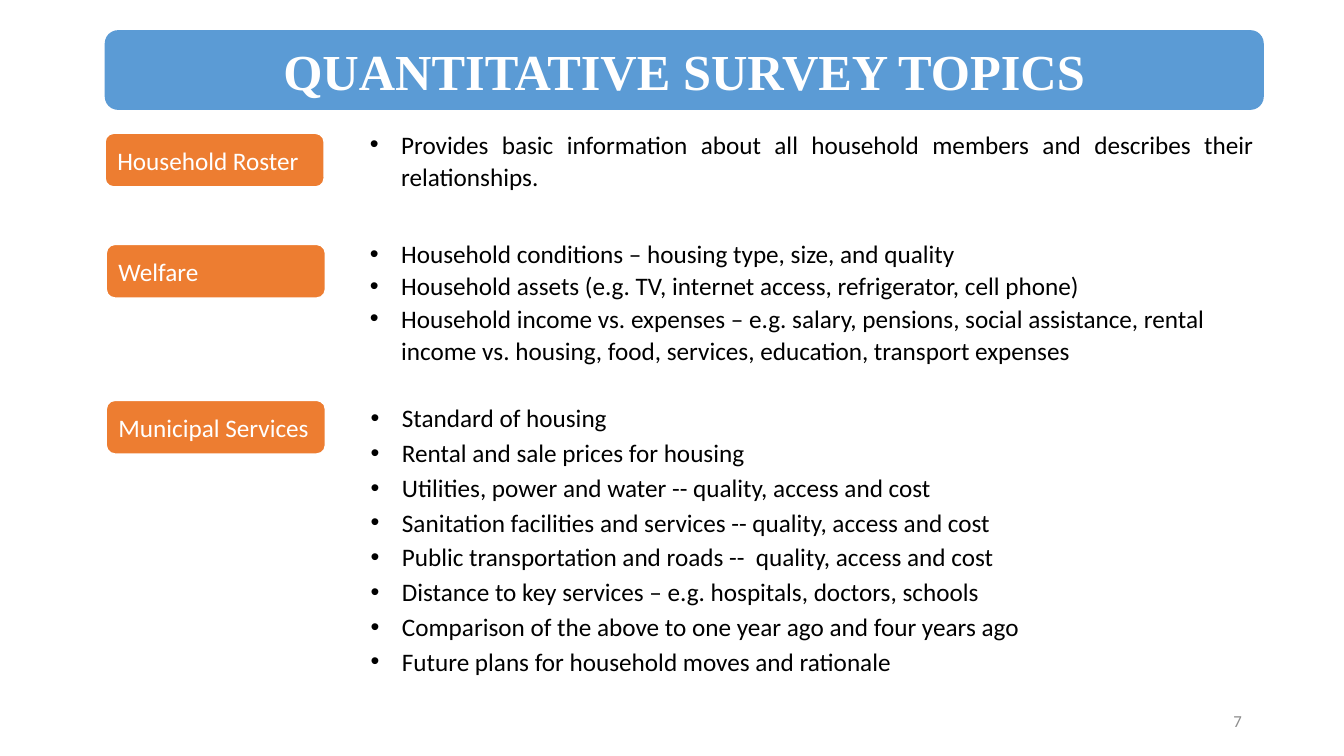
from lxml import etree
from pptx import Presentation
from pptx.dml.color import RGBColor
from pptx.enum.shapes import MSO_SHAPE as Shape
from pptx.enum.text import MSO_ANCHOR as Anchor, MSO_AUTO_SIZE as AutoSize, PP_ALIGN as Align
from pptx.oxml.ns import qn
from pptx.util import Cm, Pt

BLUE = RGBColor(0x5B, 0x9B, 0xD5)
ORANGE = RGBColor(0xED, 0x7D, 0x31)
WHITE = RGBColor(0xFF, 0xFF, 0xFF)
BLACK = RGBColor(0x00, 0x00, 0x00)
GREY = RGBColor(0x8C, 0x8C, 0x8C)

INDENT = Cm(0.79)
LABEL_WIDTH, LABEL_HEIGHT = 5.54, 1.37

# Each topic: label, (left, top) of label, (left, top, width, height) of details,
# and details as (text, alignment, line spacing)
TOPICS = [
    ("Household Roster", (2.64, 3.35), (9.07, 3.07, 22.78, 1.91), [
        ("Provides basic information about all household members and describes "
         "their relationships. ", Align.JUSTIFY, 1.07),
    ]),
    ("Welfare", (2.67, 6.15), (9.07, 5.77, 23.39, 3.61), [
        ("Household conditions – housing type, size, and quality", Align.JUSTIFY, 1.15),
        ("Household assets (e.g. TV, internet access, refrigerator, cell phone)",
         Align.LEFT, 1.07),
        ("Household income vs. expenses – e.g. salary, pensions, social assistance, "
         "rental income vs. housing, food, services, education, transport expenses",
         Align.LEFT, 1.07),
    ]),
    ("Municipal Services", (2.67, 10.08), (9.09, 9.91, 16.94, 7.34), [
        (service, Align.JUSTIFY, 1.15) for service in (
            "Standard of housing ",
            "Rental and sale prices for housing",
            "Utilities, power and water -- quality, access and cost",
            "Sanitation facilities and services -- quality, access and cost",
            "Public transportation and roads --  quality, access and cost",
            "Distance to key services – e.g. hospitals, doctors, schools",
            "Comparison of the above to one year ago and four years ago",
            "Future plans for household moves and rationale",
        )
    ]),
]


def write(paragraph, text, size, color, align=Align.LEFT, font="Calibri", bold=False):
    paragraph.text = text
    paragraph.alignment = align
    paragraph.font.name = font
    paragraph.font.size = Pt(size)
    paragraph.font.bold = bold
    paragraph.font.color.rgb = color


def add_bullet(paragraph):
    """Give the paragraph a round bullet with a hanging indent."""
    properties = paragraph._p.get_or_add_pPr()
    properties.set("marL", str(INDENT))
    properties.set("indent", str(-INDENT))
    etree.SubElement(properties, qn("a:buFont"), typeface="Arial")
    etree.SubElement(properties, qn("a:buChar"), char="•")


def add_banner(slide, box, fill):
    """Add a filled rounded box without an outline and return it."""
    banner = slide.shapes.add_shape(Shape.ROUNDED_RECTANGLE, *map(Cm, box))
    banner.shadow.inherit = False
    banner.fill.solid()
    banner.fill.fore_color.rgb = fill
    banner.line.fill.background()
    banner.text_frame.vertical_anchor = Anchor.MIDDLE
    return banner


def add_title(slide, text):
    banner = add_banner(slide, (2.64, 0.76, 29.21, 2.01), BLUE)
    write(banner.text_frame.paragraphs[0], text, 36, WHITE, Align.CENTER,
          "Times New Roman", bold=True)


def add_label(slide, text, corner):
    label = add_banner(slide, (*corner, LABEL_WIDTH, LABEL_HEIGHT), ORANGE)
    label.line.color.rgb = WHITE
    label.line.width = Pt(1.5)
    write(label.text_frame.paragraphs[0], text, 18, WHITE)


def add_details(slide, box, details):
    frame = slide.shapes.add_textbox(*map(Cm, box)).text_frame
    frame.word_wrap = True
    frame.auto_size = AutoSize.SHAPE_TO_FIT_TEXT
    for index, (text, align, spacing) in enumerate(details):
        paragraph = frame.add_paragraph() if index else frame.paragraphs[0]
        write(paragraph, text, 18, BLACK, align)
        paragraph.line_spacing = spacing
        add_bullet(paragraph)


def add_page_number(slide, number):
    frame = slide.shapes.add_textbox(Cm(23.93), Cm(17.65), Cm(7.62), Cm(1.02)).text_frame
    frame.word_wrap = True
    frame.vertical_anchor = Anchor.MIDDLE
    write(frame.paragraphs[0], number, 12, GREY, Align.RIGHT)


def main():
    deck = Presentation()
    deck.slide_width, deck.slide_height = Cm(33.87), Cm(19.05)
    slide = deck.slides.add_slide(deck.slide_layouts[6])
    add_page_number(slide, "7")
    add_title(slide, "QUANTITATIVE SURVEY TOPICS")
    for label, corner, box, details in TOPICS:
        add_label(slide, label, corner)
        add_details(slide, box, details)
    deck.save("out.pptx")


if __name__ == "__main__":
    main()
